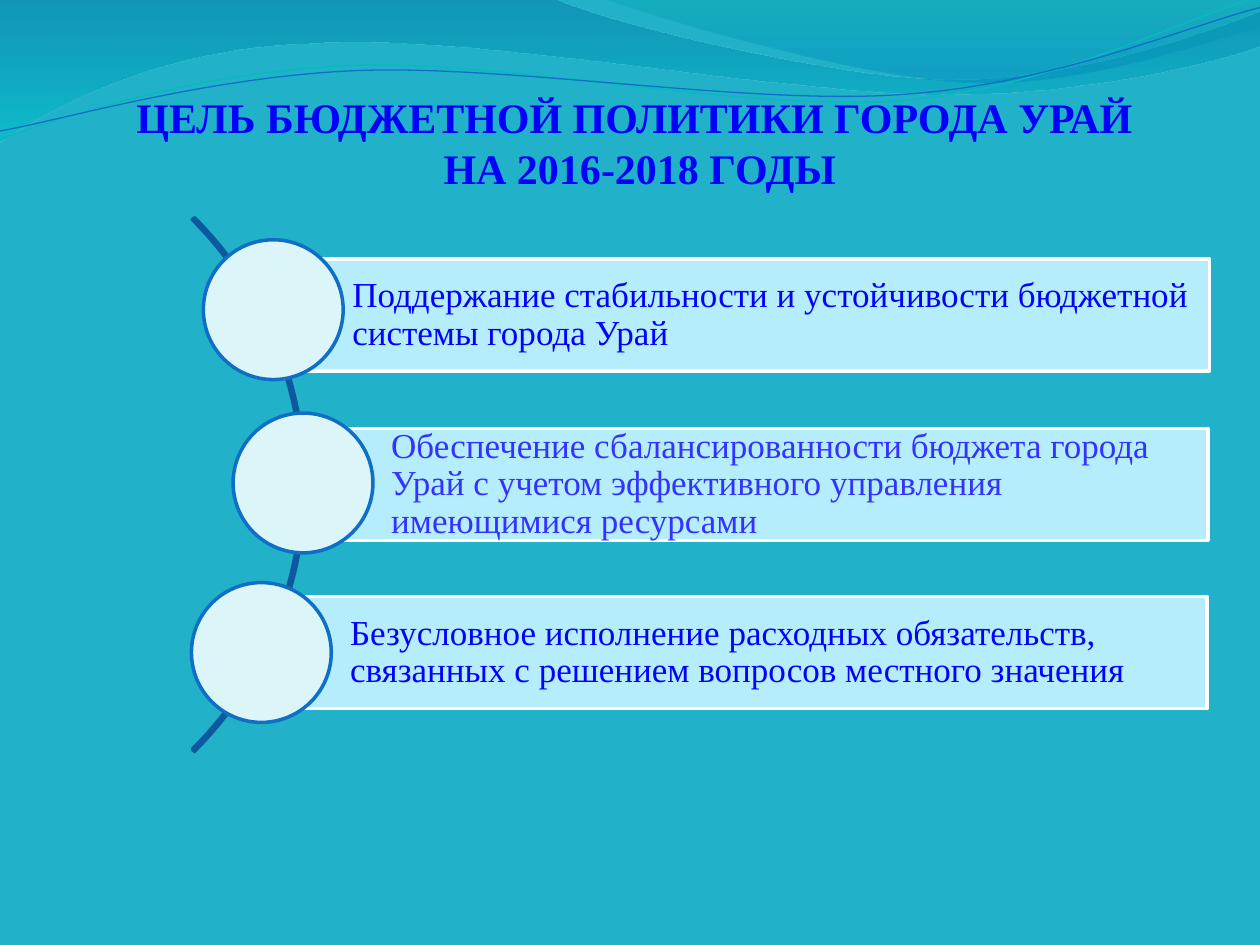
from lxml import etree
from pptx import Presentation
from pptx.dml.color import RGBColor
from pptx.enum.shapes import MSO_SHAPE
from pptx.enum.text import MSO_ANCHOR, PP_ALIGN
from pptx.oxml.ns import qn
from pptx.util import Pt

ARC, BAR, CIRCLE = MSO_SHAPE.BLOCK_ARC, MSO_SHAPE.RECTANGLE, MSO_SHAPE.OVAL
MIDDLE = MSO_ANCHOR.MIDDLE
LEFT, CENTER = PP_ALIGN.LEFT, PP_ALIGN.CENTER

FONT = "Times New Roman"
BACKGROUND = RGBColor(0x21, 0xB2, 0xC9)
BLUE = RGBColor(0x00, 0x00, 0xFF)
SOFT_BLUE = RGBColor(0x33, 0x33, 0xFF)
WHITE = RGBColor(0xFF, 0xFF, 0xFF)
BAR_FILL = RGBColor(0xB5, 0xED, 0xFD)
CIRCLE_FILL = RGBColor(0xDB, 0xF5, 0xF9)
CIRCLE_LINE = RGBColor(0x0F, 0x6F, 0xC6)
ARC_LINE = RGBColor(0x0C, 0x59, 0x9F)
TEAL_LINE = RGBColor(0x0A, 0xB8, 0xBF)

BAR_HEIGHT = 64.1
CIRCLE_SIZE = 79.9
WAVE_LINE_ROTATION = 357.3

# Paths: a start point, then lines (x, y) and Bezier curves (x1, y1, x2, y2, x, y).
# Gradient stops: position, colour, opacity in percent.
WAVES = [
    ([(0, 0), (316.8, -0.7),
      (342.7, 12.2, 478.1, 45.4, 545.8, 45.4),
      (614.2, 45.4, 689.8, 18.7, 720, 6.5),
      (720.7, 25.9),
      (707.8, 31.7, 626.4, 54.7, 537.1, 54),
      (447.8, 54, 275, 20.2, 185, 24.5),
      (92.9, 25.9, 33.1, 59.8, -0.7, 81.4),
      (0, 0)],
     [(0, RGBColor(0x00, 0x74, 0xA1), 45), (1, RGBColor(0x00, 0xC6, 0xCF), 55)]),
    ([(344.9, -0.7),
      (366.5, 7.9, 491, 44.6, 553.7, 46.8),
      (616.3, 49.7, 691.9, 23, 720, 15.1),
      (720, 0), (344.9, -0.7)],
     [(0, RGBColor(0x00, 0xA1, 0xA9), 30), (0.8, RGBColor(0x00, 0x8B, 0xBF), 45)]),
]
WAVE_LINES = [
    ([(-1.4, 62.9),
      (33.7, 51.6, 114, 29.4, 199.8, 30),
      (284.8, 30.3, 425.8, 67.2, 512.4, 64.9),
      (599, 62.4, 676.4, 25.7, 720, 15.6)], TEAL_LINE, 0.85),
    ([(-1.2, 57.9),
      (33, 53.7, 118.3, 32.5, 204, 33),
      (290.5, 33.5, 428.9, 63.8, 515.5, 61.3),
      (601.4, 59.6, 678.5, 30.1, 721.4, 21.3)], CIRCLE_LINE, 0.75),
]

TITLE = ["ЦЕЛЬ БЮДЖЕТНОЙ ПОЛИТИКИ ГОРОДА УРАЙ ", "НА 2016-2018 ГОДЫ"]
# Goals: text, colour, bar (left, top, width), circle (left, top).
GOALS = [
    ("Поддержание стабильности и устойчивости бюджетной системы города Урай",
     BLUE, (150.4, 147.9, 540.7), (116.2, 137)),
    ("Обеспечение сбалансированности бюджета города Урай с учетом "
     "эффективного управления имеющимися ресурсами",
     SOFT_BLUE, (172.6, 244.8, 517.7), (133.2, 236)),
    ("Безусловное исполнение расходных обязательств, связанных с решением "
     "вопросов местного значения",
     BLUE, (149.1, 340.9, 540.7), (109.4, 332.9)),
]


def add_curve(slide, path, close):
    """Build the outline through all points, then join each curve's three into a Bezier."""
    points = [(Pt(segment[i]), Pt(segment[i + 1]))
              for segment in path for i in range(0, len(segment), 2)]
    builder = slide.shapes.build_freeform(*points[0])
    builder.add_line_segments(points[1:], close=close)
    shape = builder.convert_to_shape()
    shape.shadow.inherit = False
    line_elements = iter(list(shape.element.iter(qn("a:lnTo"))))
    for segment in path[1:]:
        parts = [next(line_elements) for _ in range(len(segment) // 2)]
        if len(parts) == 3:
            curve = etree.Element(qn("a:cubicBezTo"))
            parts[0].addprevious(curve)
            for part in parts:
                curve.append(part[0])
                part.getparent().remove(part)
    return shape


def add_wave(slide, path, stops):
    shape = add_curve(slide, path, True)
    shape.fill.gradient()
    shape.fill.gradient_angle = 270
    for gradient_stop, (position, color, _) in zip(shape.fill.gradient_stops, stops):
        gradient_stop.position = position
        gradient_stop.color.rgb = color
    for color_element, (_, _, opacity) in zip(shape.element.iter(qn("a:srgbClr")), stops):
        etree.SubElement(color_element, qn("a:alpha"), val=str(opacity * 1000))
    shape.line.fill.background()


def add_wave_line(slide, path, color, width):
    shape = add_curve(slide, path, False)
    shape.rotation = WAVE_LINE_ROTATION
    shape.fill.background()
    shape.line.color.rgb = color
    shape.line.width = Pt(width)


def add_outlined_shape(slide, kind, box, line_color, fill_color=None):
    shape = slide.shapes.add_shape(kind, *map(Pt, box))
    shape.shadow.inherit = False
    if fill_color is None:
        shape.fill.background()
    else:
        shape.fill.solid()
        shape.fill.fore_color.rgb = fill_color
    shape.line.color.rgb = line_color
    shape.line.width = Pt(2)
    return shape


def write_paragraph(paragraph, text, size, color, alignment, bold=False):
    paragraph.alignment = alignment
    run = paragraph.add_run()
    run.text = text
    run.font.name = FONT
    run.font.size = Pt(size)
    run.font.bold = bold
    run.font.color.rgb = color


def add_title(slide):
    frame = slide.shapes.add_textbox(Pt(31.1), Pt(49), Pt(668.9), Pt(65.5)).text_frame
    frame.word_wrap = True
    for index, text in enumerate(TITLE):
        paragraph = frame.add_paragraph() if index else frame.paragraphs[0]
        write_paragraph(paragraph, text, 24, BLUE, CENTER, bold=True)


def add_goal(slide, text, color, bar_box, circle_position):
    bar = add_outlined_shape(slide, BAR, (*bar_box, BAR_HEIGHT), WHITE, BAR_FILL)
    frame = bar.text_frame
    frame.word_wrap = True
    frame.vertical_anchor = MIDDLE
    frame.margin_left = Pt(50.9)
    frame.margin_right = frame.margin_top = frame.margin_bottom = Pt(4.4)
    paragraph = frame.paragraphs[0]
    paragraph.line_spacing = 0.9
    write_paragraph(paragraph, text, 20, color, LEFT)
    circle_box = (*circle_position, CIRCLE_SIZE, CIRCLE_SIZE)
    add_outlined_shape(slide, CIRCLE, circle_box, CIRCLE_LINE, CIRCLE_FILL)


def add_arc(slide):
    arc = add_outlined_shape(slide, ARC, (-257, 61.2, 431.3, 431.3), ARC_LINE)
    for index, value in enumerate((189, 27, 0.004)):
        arc.adjustments[index] = value


def main():
    presentation = Presentation()
    presentation.slide_width, presentation.slide_height = Pt(720), Pt(540)
    slide = presentation.slides.add_slide(presentation.slide_layouts[6])
    slide.background.fill.solid()
    slide.background.fill.fore_color.rgb = BACKGROUND
    for wave in WAVES:
        add_wave(slide, *wave)
    for wave_line in WAVE_LINES:
        add_wave_line(slide, *wave_line)
    add_title(slide)
    add_arc(slide)
    for goal in GOALS:
        add_goal(slide, *goal)
    presentation.save("out.pptx")


if __name__ == "__main__":
    main()
